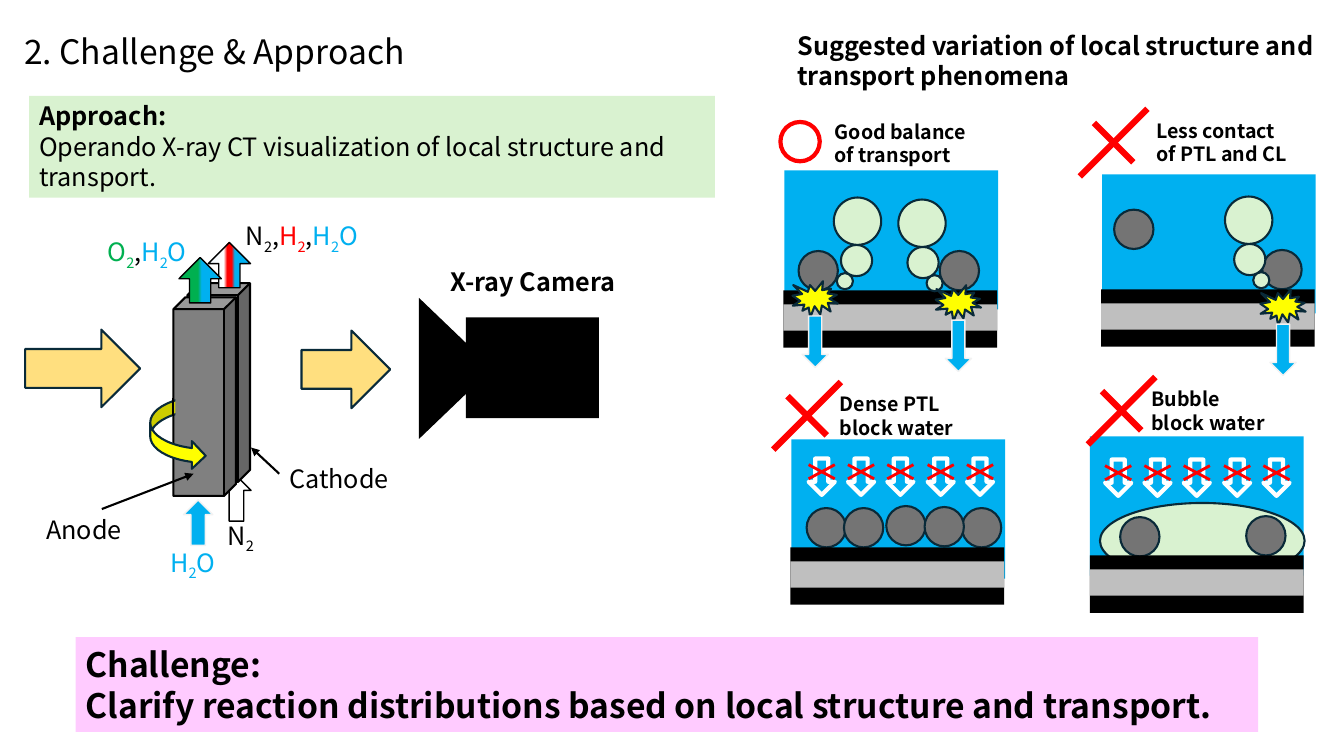
"""Build the slide on the challenge and approach of operando X-ray CT visualization."""
from dataclasses import dataclass
from itertools import groupby

from lxml import etree
from pptx import Presentation
from pptx.dml.color import RGBColor
from pptx.enum.shapes import MSO_CONNECTOR, MSO_SHAPE
from pptx.enum.text import MSO_ANCHOR, MSO_AUTO_SIZE, PP_ALIGN
from pptx.oxml.ns import qn
from pptx.util import Emu, Pt

PX = 9144
RECT, OVAL, CUBE = MSO_SHAPE.RECTANGLE, MSO_SHAPE.OVAL, MSO_SHAPE.CUBE
ARROW, BURST = MSO_SHAPE.RIGHT_ARROW, MSO_SHAPE.EXPLOSION1
CURVED_ARROW, TRIANGLE = MSO_SHAPE.CURVED_RIGHT_ARROW, MSO_SHAPE.ISOSCELES_TRIANGLE
STRAIGHT = MSO_CONNECTOR.STRAIGHT
TOP, MIDDLE = MSO_ANCHOR.TOP, MSO_ANCHOR.MIDDLE
GROW, FIXED = MSO_AUTO_SIZE.SHAPE_TO_FIT_TEXT, MSO_AUTO_SIZE.NONE
LEFT = PP_ALIGN.LEFT


@dataclass(frozen=True)
class Theme:
    """Colours, font and type sizes of the slide."""
    font: str = "Noto Sans CJK JP"
    heading: int = 24
    body: int = 18
    caption: int = 14
    black: str = "000000"
    white: str = "FFFFFF"
    outline: str = "092A39"
    pale: str = "F2F2F2"
    mint: str = "D9F2D0"
    pink: str = "FF99FF"
    amber: str = "FFC000"
    yellow: str = "FFFF00"
    water: str = "00B0F0"
    oxygen: str = "00B050"
    red: str = "FF0000"
    cell: str = "808080"
    grain: str = "747474"
    membrane: str = "BFBFBF"
    ice: str = "F0F8FD"


THEME = Theme()
OUTLINE = (THEME.outline, 1.5)
EDGE = (THEME.black, 1.5)
THIN = (THEME.black, 1)


def apply(target, formats):
    """Set every format value on the target."""
    for name, value in formats.items():
        setattr(target, name, value)


def px(*lengths):
    """Turn px lengths into EMU."""
    return [Emu(round(length * PX)) for length in lengths]


def set_line(line, style):
    """Draw the line in the given colour and width, or hide it."""
    if style is None:
        line.fill.background()
    else:
        line.color.rgb = RGBColor.from_string(style[0])
        line.width = Pt(style[1])


def add_box(shapes, kind, frame, color, line=None, rotation=0, alpha=None):
    """Add a preset shape with a solid fill."""
    box = shapes.add_shape(kind, *px(*frame))
    box.shadow.inherit = False
    box.rotation = rotation
    box.fill.solid()
    box.fill.fore_color.rgb = RGBColor.from_string(color)
    set_line(box.line, line)
    if alpha:
        tint = box._element.spPr.find(qn("a:solidFill"))[0]
        etree.SubElement(tint, qn("a:alpha")).set("val", str(alpha * 1000))
    return box


def add_gas_arrow(shapes, frame, stops):
    """Add an upward arrow whose fill runs through the gradient stops."""
    arrow = add_box(shapes, ARROW, frame, THEME.white, THIN, 270)
    arrow.fill.gradient()
    arrow.fill.gradient_angle = 270
    stop_list = arrow._element.spPr.find(qn("a:gradFill")).find(qn("a:gsLst"))
    for old_stop in list(stop_list):
        stop_list.remove(old_stop)
    for percent, color in stops:
        stop = etree.SubElement(stop_list, qn("a:gs"), pos=str(percent * 1000))
        etree.SubElement(stop, qn("a:srgbClr"), val=color)


def add_line(shapes, start, end, color, width, arrow=False):
    """Add a straight line, with an arrowhead at its end if asked."""
    line = shapes.add_connector(STRAIGHT, *px(*start, *end))
    set_line(line.line, (color, width))
    properties = line._element.spPr
    if arrow:
        etree.SubElement(line.line._get_or_add_ln(), qn("a:tailEnd"), type="triangle")
    etree.SubElement(properties, qn("a:effectLst"))
    return line


def write(box, paragraphs, size, anchor=TOP, fit=GROW):
    """Fill a box with paragraphs of (text, colour, bold) spans."""
    frame = box.text_frame
    apply(frame, {"word_wrap": True, "auto_size": fit, "vertical_anchor": anchor})
    for index, spans in enumerate(paragraphs):
        para = frame.paragraphs[0] if index == 0 else frame.add_paragraph()
        para.alignment = LEFT
        for text, color, bold in spans:
            span = para.add_run()
            span.text = text
            apply(span.font, {"name": THEME.font, "size": Pt(size), "bold": bold})
            span.font.color.rgb = RGBColor.from_string(color)
            if text.isdigit():
                span._r.get_or_add_rPr().set("baseline", "-25000")


def add_label(shapes, frame, lines, size=THEME.body, bold=False):
    """Add a black text box with one paragraph per line."""
    box = shapes.add_textbox(*px(*frame))
    write(box, [[(line, THEME.black, bold)] for line in lines], size)
    return box


def add_formula(shapes, frame, parts):
    """Add a chemical formula with its digits as subscripts."""
    spans = [("".join(letters), color, False)
             for text, color in parts for _, letters in groupby(text, str.isdigit)]
    write(shapes.add_textbox(*px(*frame)), [spans], THEME.body)


def add_water(shapes, x, y):
    """Add the water region of a panel."""
    add_box(shapes, RECT, (x, y, 212, 138), THEME.water)


def add_layers(shapes, x, y):
    """Add the membrane between its two catalyst layers."""
    add_box(shapes, RECT, (x, y, 212, 57), THEME.black)
    add_box(shapes, RECT, (x, y + 14, 212, 26), THEME.membrane)


def add_grains(shapes, *places):
    """Add round grains of the transport layer."""
    for x, y in places:
        add_box(shapes, OVAL, (x, y, 39, 39), THEME.grain, OUTLINE)


def add_bubbles(shapes, x, y, mirrored=False):
    """Add a rising column of three bubbles."""
    group = shapes.add_group_shape().shapes
    for inset, drop, width in ((28, 75, 16), (9, 47, 31), (0, 0, 47)):
        left = x + (47 - inset - width if mirrored else inset)
        add_box(group, OVAL, (left, y + drop, width, width), THEME.mint, OUTLINE)


def add_reaction(shapes, x, y):
    """Add a reaction burst and the flow that leaves it."""
    add_box(shapes, BURST, (x, y, 45, 36), THEME.yellow, OUTLINE)
    add_box(shapes, ARROW, (x - 3, y + 47, 51, 26), THEME.water, (THEME.pale, 1), 90)


def add_cross(shapes, x, y):
    """Add the red cross of an unfavourable panel."""
    group = shapes.add_group_shape().shapes
    add_line(group, (x + 14, y + 14), (x + 53, y + 53), THEME.red, 4.5)
    add_line(group, (x, y + 67), (x + 67, y), THEME.red, 4.5)


def add_blocked_flow(shapes, x, y):
    """Add a row of five crossed-out water arrows."""
    group = shapes.add_group_shape().shapes
    for index in range(5):
        left = x + round(39.25 * index)
        add_box(group, ARROW, (left, y, 36, 26), THEME.water, (THEME.white, 3), 90)
        for start, end in ((1, 15), (15, 1)):
            add_line(group, (left + 5, y + start), (left + 31, y + end), THEME.red, 2)


def draw_messages(shapes):
    """Draw the title, the approach and the challenge."""
    add_label(shapes, (14, 26, 561, 50), ["2. Challenge & Approach"], THEME.heading)
    approach = add_box(shapes, RECT, (29, 95, 680, 101), THEME.mint)
    write(approach, [[("Approach:", THEME.black, True)], [(
        "Operando X-ray CT visualization of local structure and transport.",
        THEME.black, False)]], THEME.body)
    challenge = add_box(shapes, RECT, (75, 632, 1173, 94), THEME.pink, alpha=50)
    write(challenge, [[("Challenge:", THEME.black, True)], [(
        "Clarify reaction distributions based on local structure and transport.",
        THEME.black, True)]], THEME.heading, MIDDLE, FIXED)


def draw_cell(shapes):
    """Draw the electrolysis cell between the X-ray beam and the camera."""
    add_box(shapes, ARROW, (212, 480, 45, 29), THEME.white, THIN, 270)
    for frame in ((25, 327, 114, 77), (299, 328, 88, 77)):
        add_box(shapes, ARROW, frame, THEME.amber, OUTLINE, alpha=50)
    for x, y in ((186, 281), (172, 295)):
        add_box(shapes, CUBE, (x, y, 62, 197), THEME.cell, EDGE).adjustments[0] = 0.19
    add_box(shapes, ARROW, (174, 504, 45, 29), THEME.water, (THEME.pale, 1), 270)
    add_gas_arrow(shapes, (205, 242, 45, 42), (
        (0, THEME.ice), (37, THEME.white), (45, THEME.red), (56, THEME.red),
        (63, THEME.water)))
    add_box(shapes, CURVED_ARROW, (149, 393, 55, 73), THEME.yellow, OUTLINE)
    add_box(shapes, RECT, (174, 385, 38, 40), THEME.cell)
    add_line(shapes, (172, 395), (172, 413), *EDGE)
    add_formula(shapes, (216, 511, 56, 40), [("N2", THEME.black)])
    add_formula(shapes, (159, 538, 76, 40), [("H2O", THEME.water)])
    add_formula(shapes, (234, 214, 149, 40), [
        ("N2,", THEME.black), ("H2", THEME.red), (",", THEME.black), ("H2O", THEME.water)])
    add_gas_arrow(shapes, (176, 257, 45, 42), (
        (0, THEME.oxygen), (45, THEME.oxygen), (54, THEME.water)))
    add_formula(shapes, (97, 230, 149, 40), [
        ("O2", THEME.oxygen), (",", THEME.black), ("H2O", THEME.water)])
    anode = add_label(shapes, (36, 505, 130, 40), ["Anode"])
    add_label(shapes, (277, 455, 130, 40), ["Cathode"])
    add_line(shapes, (101, 505), (192, 470), *EDGE, arrow=True).begin_connect(anode, 0)
    add_line(shapes, (277, 470), (249, 444), *EDGE, arrow=True)
    add_box(shapes, RECT, (462, 315, 132, 100), THEME.black)
    add_box(shapes, TRIANGLE, (382, 329, 140, 73), THEME.black, rotation=90)
    add_label(shapes, (437, 259, 228, 40), ["X-ray Camera"], bold=True)


def draw_panels(shapes):
    """Draw the four variations of local structure."""
    add_label(shapes, (781, 25, 532, 71), [
        "Suggested variation of local structure and transport phenomena"], bold=True)
    for x, y in ((778, 169), (1093, 173), (785, 436), (1081, 433)):
        add_water(shapes, x, y)
    add_box(shapes, OVAL, (1091, 499, 203, 75), THEME.mint, OUTLINE)
    add_grains(shapes, (792, 249), (932, 249), (1252, 248), (1105, 208), (954, 504),
               (879, 502), (917, 503), (800, 504), (837, 504), (1111, 513), (1236, 512))
    for x, y in ((777, 288), (1092, 287), (784, 543), (1081, 551)):
        add_layers(shapes, x, y)
    for x, y, mirrored in ((827, 196, True), (891, 198, False), (1215, 195, False)):
        add_bubbles(shapes, x, y, mirrored)
    for x, y in ((786, 279), (928, 283), (1250, 287)):
        add_reaction(shapes, x, y)
    for x, y, width, lines in (
            (818, 114, 169, ["Good balance", "of transport"]),
            (1137, 113, 181, ["Less contact", "of PTL and CL"]),
            (823, 384, 140, ["Dense PTL", "block water"]),
            (1132, 379, 159, ["Bubble", "block water"])):
        add_label(shapes, (x, y, width, 57), lines, THEME.caption, True)
    add_box(shapes, OVAL, (774, 121, 39, 39), THEME.white, (THEME.red, 3))
    for x, y in ((1071, 108), (767, 379), (1079, 374)):
        add_cross(shapes, x, y)
    for x, y in ((797, 460), (1091, 461)):
        add_blocked_flow(shapes, x, y)


def main():
    """Build and save the deck."""
    deck = Presentation()
    deck.slide_width, deck.slide_height = px(1333, 750)
    page = deck.slides.add_slide(deck.slide_layouts[6])
    for draw in (draw_messages, draw_cell, draw_panels):
        draw(page.shapes)
    deck.save("out.pptx")


if __name__ == "__main__":
    main()
